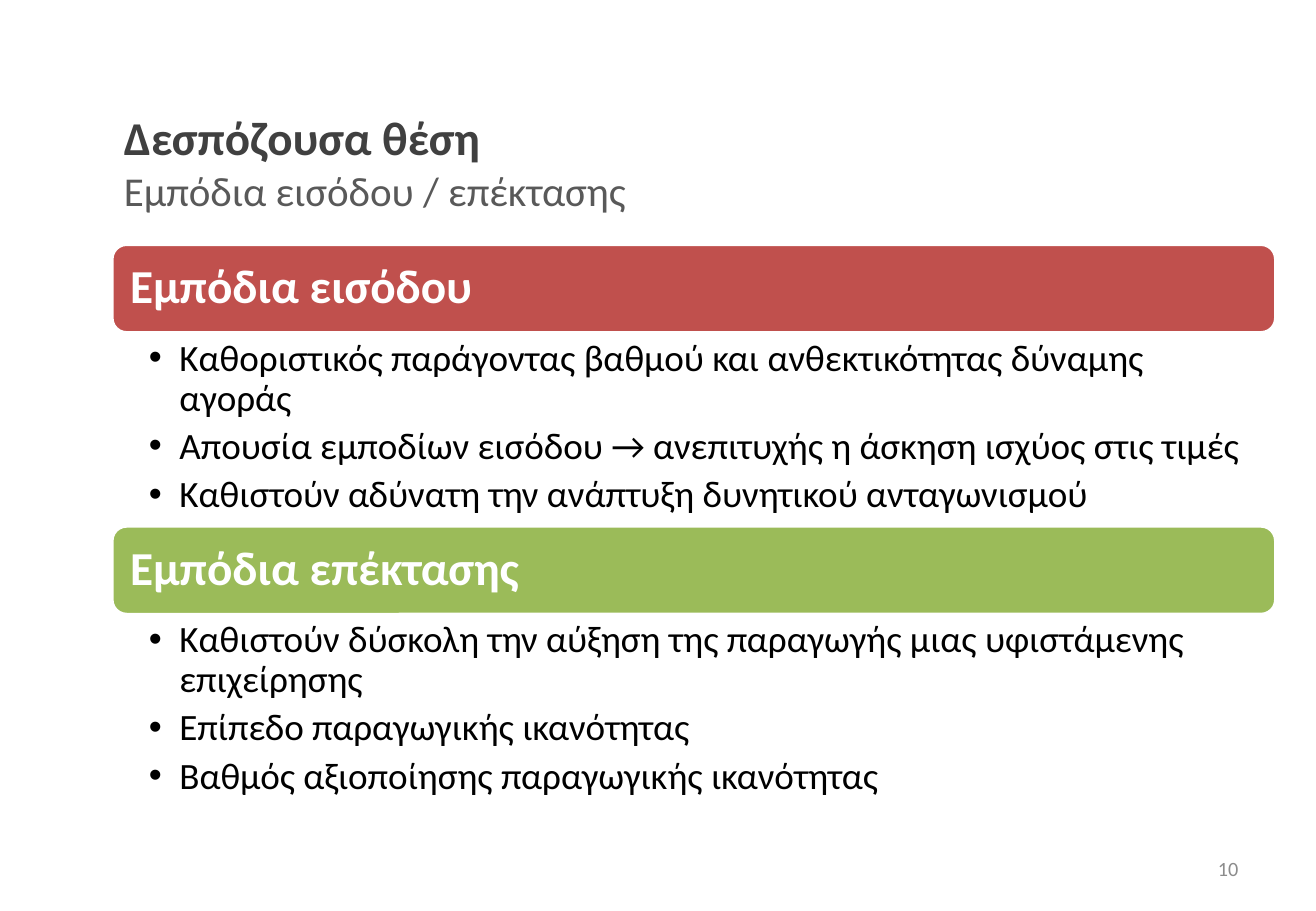
from dataclasses import dataclass

import lxml.etree
import pptx
import pptx.dml.color
import pptx.enum.shapes
import pptx.enum.text
import pptx.oxml.ns
import pptx.util
from pptx.util import Cm


@dataclass(frozen=True)
class Theme:
    font: str = "Calibri"
    title: str = "404040"
    subtitle: str = "595959"
    entry: str = "C0504D"
    expansion: str = "9BBB59"
    white: str = "FFFFFF"
    black: str = "000000"
    number: str = "8C8C8C"
    title_size: float = 27.9
    subtitle_size: float = 24.3
    header_size: float = 28
    list_size: float = 22
    number_size: float = 12


THEME = Theme()
LEFT, WIDTH = Cm(2.34), Cm(24.33)
FIRST_TOP, SECTION_PITCH = Cm(5.11), Cm(5.89)
HEADER_HEIGHT, LIST_OFFSET, LIST_HEIGHT = Cm(1.85), Cm(1.88), Cm(4.01)

SECTIONS = [
    ("Εμπόδια εισόδου", THEME.entry, [
        "Καθοριστικός παράγοντας βαθμού και ανθεκτικότητας δύναμης αγοράς",
        "Απουσία εμποδίων εισόδου → ανεπιτυχής η άσκηση ισχύος στις τιμές",
        "Καθιστούν αδύνατη την ανάπτυξη δυνητικού ανταγωνισμού",
    ]),
    ("Εμπόδια επέκτασης", THEME.expansion, [
        "Καθιστούν δύσκολη την αύξηση της παραγωγής μιας υφιστάμενης επιχείρησης",
        "Επίπεδο παραγωγικής ικανότητας",
        "Βαθμός αξιοποίησης παραγωγικής ικανότητας",
    ]),
]


def rgb(color):
    return pptx.dml.color.RGBColor.from_string(color)


def place(shape, left, top, width, height):
    shape.left, shape.top, shape.width, shape.height = left, top, width, height


def set_frame(frame, anchor, left=0.25, top=0.13, right=0.25, bottom=0.13):
    frame.word_wrap = True
    frame.auto_size = pptx.enum.text.MSO_AUTO_SIZE.NONE
    frame.vertical_anchor = anchor
    frame.margin_left, frame.margin_right = Cm(left), Cm(right)
    frame.margin_top, frame.margin_bottom = Cm(top), Cm(bottom)


def add_span(para, text, size, color, bold=False):
    span = para.add_run()
    span.text = text
    span.font.name = THEME.font
    span.font.size = pptx.util.Pt(size)
    span.font.bold = bold
    span.font.color.rgb = rgb(color)


def add_bullet(para):
    properties = para._p.get_or_add_pPr()
    properties.set("marL", str(Cm(0.64)))
    properties.set("indent", str(Cm(-0.64)))
    for tag, key, value in (("a:buFont", "typeface", "Arial"), ("a:buChar", "char", "•")):
        element = lxml.etree.SubElement(properties, pptx.oxml.ns.qn(tag))
        element.set(key, value)


def fill_title(title):
    place(title, LEFT, Cm(2.16), WIDTH, Cm(2.44))
    set_frame(title.text_frame, pptx.enum.text.MSO_ANCHOR.MIDDLE)
    para = title.text_frame.paragraphs[0]
    para.alignment = pptx.enum.text.PP_ALIGN.LEFT
    add_span(para, "Δεσπόζουσα θέση", THEME.title_size, THEME.title, bold=True)
    para.add_line_break()
    add_span(para, "Εμπόδια εισόδου / επέκτασης", THEME.subtitle_size, THEME.subtitle)


def add_header(page, text, color, top):
    box = page.shapes.add_shape(
        pptx.enum.shapes.MSO_SHAPE.ROUNDED_RECTANGLE, LEFT, top, WIDTH, HEADER_HEIGHT)
    box.shadow.inherit = False
    box.fill.solid()
    box.fill.fore_color.rgb = rgb(color)
    box.line.color.rgb = rgb(THEME.white)
    box.line.width = pptx.util.Pt(2)
    set_frame(box.text_frame, pptx.enum.text.MSO_ANCHOR.MIDDLE, left=0.29, right=0.29)
    para = box.text_frame.paragraphs[0]
    para.alignment = pptx.enum.text.PP_ALIGN.LEFT
    para.line_spacing = 0.9
    add_span(para, text, THEME.header_size, THEME.white, bold=True)


def fill_list(body, items, top):
    place(body, LEFT, top, WIDTH, LIST_HEIGHT)
    frame = body.text_frame
    set_frame(frame, pptx.enum.text.MSO_ANCHOR.TOP, 0.77, 0.1, 0.55, 0.1)
    for index, item in enumerate(items):
        para = frame.add_paragraph() if index else frame.paragraphs[0]
        add_bullet(para)
        para.line_spacing = 0.9
        para.space_before = pptx.util.Pt(0)
        para.space_after = pptx.util.Pt(4.8)
        add_span(para, item, THEME.list_size, THEME.black)


def add_page_number(page, text):
    box = page.shapes.add_textbox(Cm(19.71), Cm(17.65), Cm(6.43), Cm(1.02))
    set_frame(box.text_frame, pptx.enum.text.MSO_ANCHOR.MIDDLE)
    para = box.text_frame.paragraphs[0]
    para.alignment = pptx.enum.text.PP_ALIGN.RIGHT
    add_span(para, text, THEME.number_size, THEME.number)


def main():
    deck = pptx.Presentation()
    deck.slide_width, deck.slide_height = Cm(27.51), Cm(19.05)
    page = deck.slides.add_slide(deck.slide_layouts.get_by_name("Two Content"))
    title, *bodies = page.placeholders
    fill_title(title)
    for index, (body, (header, color, items)) in enumerate(zip(bodies, SECTIONS)):
        top = FIRST_TOP + index * SECTION_PITCH
        add_header(page, header, color, top)
        fill_list(body, items, top + LIST_OFFSET)
    add_page_number(page, "10")
    deck.save("out.pptx")


if __name__ == "__main__":
    main()
